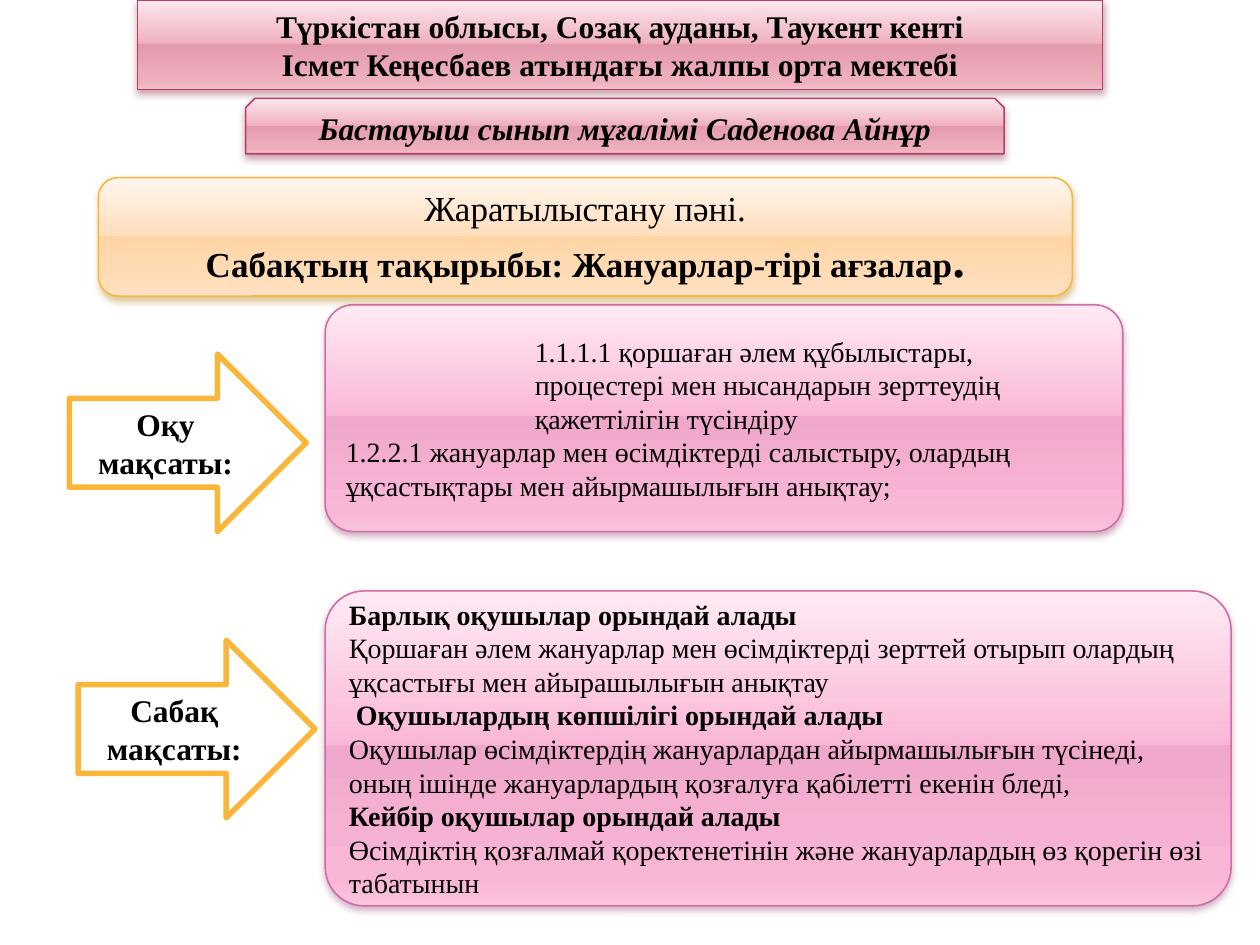
from lxml.etree import SubElement
from pptx import Presentation
from pptx.dml.color import RGBColor
from pptx.enum.shapes import MSO_SHAPE
from pptx.enum.text import MSO_ANCHOR, MSO_AUTO_SIZE, PP_ALIGN
from pptx.oxml.ns import qn
from pptx.util import Pt

BLACK = RGBColor(0x00, 0x00, 0x00)
WHITE = RGBColor(0xFF, 0xFF, 0xFF)
ROSE = RGBColor(0xB8, 0x3D, 0x68)
ROSE_SHADOW = RGBColor(0x7F, 0x12, 0x38)
PINK = RGBColor(0xCF, 0x6D, 0xA4)
PINK_SHADOW = RGBColor(0x89, 0x32, 0x63)
AMBER = RGBColor(0xF9, 0xB6, 0x39)
AMBER_SHADOW = RGBColor(0xB0, 0x74, 0x05)


def shades(*codes):
    return [RGBColor.from_string(code) for code in codes]


# Each theme: outline, shadow, glossy gradient from top to bottom
ROSE_THEME = (ROSE, ROSE_SHADOW,
              shades("FCE8ED", "EFB0BE", "E39BAC", "EFB0BE", "F0BEC9"))
PINK_THEME = (PINK, PINK_SHADOW,
              shades("FFEAF4", "F9B7D7", "EFA7CB", "F9B7D7", "F8C4DD"))
AMBER_THEME = (AMBER, AMBER_SHADOW,
               shades("FFF6ED", "FFDEBC", "FFD4A4", "FFDEBC", "FFE3C7"))
STOPS = (0, 49, 49, 92, 100)


class SlideBuilder:
    font = "Times New Roman"

    def __init__(self, prs):
        self.s = prs.slides.add_slide(prs.slide_layouts[5])

    def place(self, sp, box):
        for name, value in zip(("left", "top", "width", "height"), box):
            setattr(sp, name, Pt(value))

    def gloss(self, sp, theme):
        """Five-stop gradient, thin outline and soft shadow."""
        outline, shade, colours = theme
        sp.fill.gradient()
        sp.fill.gradient_angle = 270
        stops = sp.fill._fill._gradFill.find(qn("a:gsLst"))
        stops.clear()
        for pos, colour in zip(STOPS, colours):
            gs = SubElement(stops, qn("a:gs"), pos=str(pos * 1000))
            SubElement(gs, qn("a:srgbClr"), val=str(colour))
        sp.line.color.rgb = outline
        sp.line.width = Pt(0.9)
        sp.shadow.inherit = False
        effects = sp._element.spPr.find(qn("a:effectLst"))
        shadow = SubElement(effects, qn("a:outerShdw"), blurRad=str(Pt(4)),
                            dist=str(Pt(2)), dir="5400000", rotWithShape="0")
        colour = SubElement(shadow, qn("a:srgbClr"), val=str(shade))
        SubElement(colour, qn("a:alpha"), val="38000")

    def text(self, sp, paragraphs, align=PP_ALIGN.CENTER, **base):
        """Each paragraph is a list of (text, format values) runs."""
        tf = sp.text_frame
        tf.word_wrap = True
        tf.auto_size = MSO_AUTO_SIZE.NONE
        tf.vertical_anchor = MSO_ANCHOR.MIDDLE
        for i, runs in enumerate(paragraphs):
            p = tf.add_paragraph() if i else tf.paragraphs[0]
            p.alignment = align
            for words, extra in runs:
                r = p.add_run()
                r.text = words
                r.font.color.rgb = BLACK
                for name, value in {"name": self.font, **base, **extra}.items():
                    setattr(r.font, name, value)
        return tf

    def title(self, box, theme, lines):
        sp = self.s.shapes.title
        self.place(sp, box)
        self.gloss(sp, theme)
        self.text(sp, [[(line, {})] for line in lines], size=Pt(18), bold=True)

    def panel(self, kind, box, theme, paragraphs, adj=None, **style):
        sp = self.s.shapes.add_shape(kind, *map(Pt, box))
        if adj is not None:
            sp.adjustments[0] = adj
        self.gloss(sp, theme)
        return self.text(sp, paragraphs, **style)

    def arrow(self, left, top, words):
        sp = self.s.shapes.add_shape(MSO_SHAPE.RIGHT_ARROW,
                                     *map(Pt, (left, top, 135.4, 101.5)))
        sp.shadow.inherit = False
        sp.fill.solid()
        sp.fill.fore_color.rgb = WHITE
        sp.line.color.rgb = AMBER
        sp.line.width = Pt(3.15)
        self.text(sp, [[(words, {})]], size=Pt(18), bold=True)

    def indent(self, p, margin):
        pPr = p._p.get_or_add_pPr()
        pPr.set("marL", str(Pt(margin)))
        pPr.set("indent", "0")


def main():
    prs = Presentation()
    prs.slide_width, prs.slide_height = Pt(720), Pt(540)
    b = SlideBuilder(prs)
    body = {"align": PP_ALIGN.LEFT, "size": Pt(16), "adj": 0.124}
    bold = {"bold": True}

    # School and teacher
    b.title((78.5, 0, 551.5, 51.1), ROSE_THEME,
            ["Түркістан облысы, Созақ ауданы, Таукент кенті",
             "Ісмет Кеңесбаев атындағы жалпы орта мектебі"])
    b.panel(MSO_SHAPE.SNIP_2_SAME_RECTANGLE, (140.4, 56.2, 433.4, 31.7),
            ROSE_THEME, [[("Бастауыш сынып мұғалімі Саденова Айнұр", {})]],
            size=Pt(18), bold=True, italic=True)

    # Learning objectives
    b.arrow(39.6, 202.3, "Оқу мақсаты:")
    tf = b.panel(MSO_SHAPE.ROUNDED_RECTANGLE, (185.8, 174.2, 455.8, 129.6), PINK_THEME, [
        [("1.1.1.1 қоршаған әлем құбылыстары, процестері мен нысандарын "
          "зерттеудің қажеттілігін түсіндіру", {})],
        [("1.2.2.1 жануарлар мен өсімдіктерді салыстыру, олардың "
          "ұқсастықтары мен айырмашылығын анықтау;", {})],
    ], **body)
    tf.paragraphs[0].level = 3
    b.indent(tf.paragraphs[0], 108)

    # Lesson objectives
    b.arrow(44.6, 365.8, "Сабақ мақсаты:")
    tf = b.panel(MSO_SHAPE.ROUNDED_RECTANGLE, (185.8, 337.7, 517.7, 180), PINK_THEME, [
        [("Барлық оқушылар орындай алады", bold)],
        [("Қоршаған әлем жануарлар мен өсімдіктерді зерттей отырып олардың "
          "ұқсастығы мен айырашылығын анықтау", {})],
        [("Оқушылардың көпшілігі орындай алады", bold)],
        [("Оқушылар өсімдіктердің жануарлардан айырмашылығын түсінеді, оның "
          "ішінде жануарлардың қозғалуға қабілетті екенін бледі,", {})],
        [("Кейбір оқушылар орындай алады", bold)],
        [("Өсімдіктің қозғалмай қоректенетінін және жануарлардың өз қорегін "
          "өзі табатынын", {})],
    ], **body)
    b.indent(tf.paragraphs[2], 4)

    # Subject and topic
    b.panel(MSO_SHAPE.ROUNDED_RECTANGLE, (56.2, 101.5, 556.6, 67.7), AMBER_THEME, [
        [("Жаратылыстану пәні.", {})],
        [("Сабақтың тақырыбы: Жануарлар-тірі ағзалар", bold),
         (".", {"bold": True, "size": Pt(28)})],
    ], size=Pt(20))

    prs.save("out.pptx")


if __name__ == "__main__":
    main()
